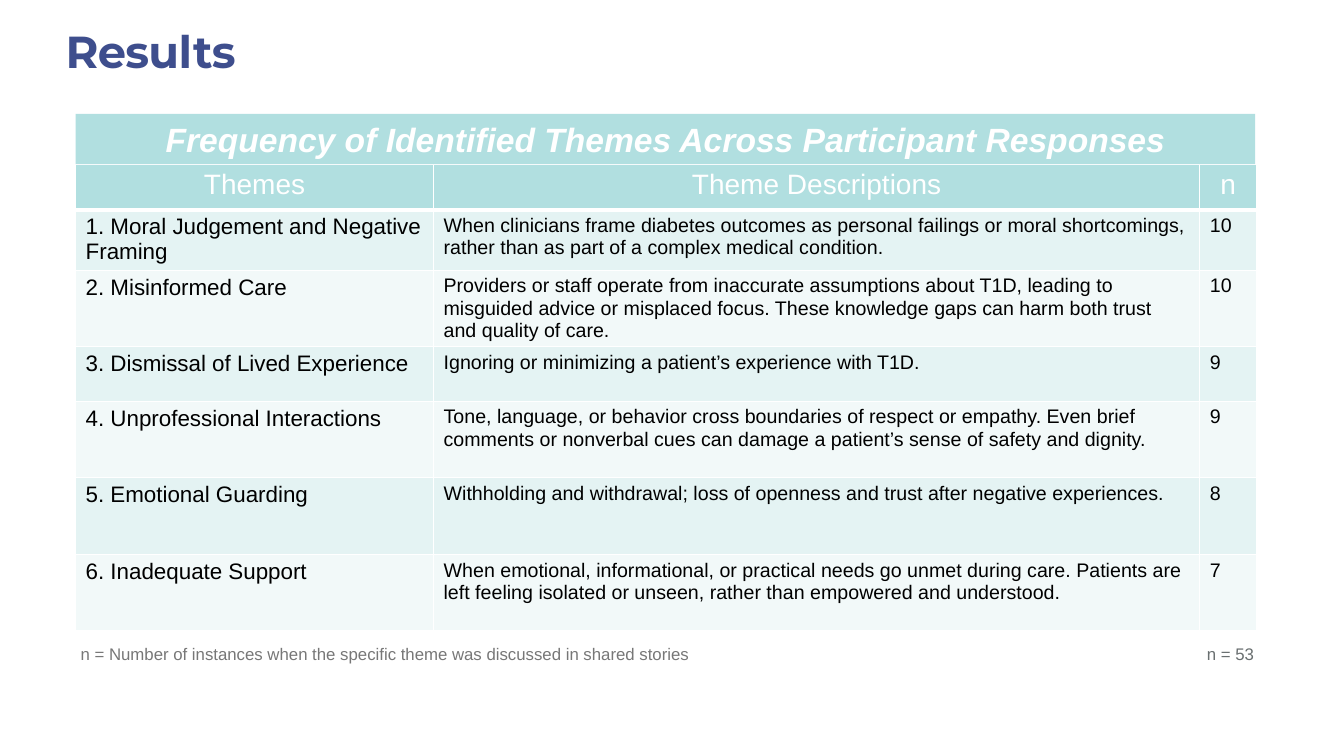
from lxml import etree
from pptx import Presentation
from pptx import util as u
from pptx.dml.color import RGBColor
from pptx.enum import shapes, text
from pptx.oxml.ns import qn

TITLE = "Results"
BANNER = "Frequency of Identified Themes Across Participant Responses"
HEADINGS = ("Themes", "Theme Descriptions", "n")
THEMES = [
    ("1. Moral Judgement and Negative Framing",
     "When clinicians frame diabetes outcomes as personal failings or moral shortcomings, "
     "rather than as part of a complex medical condition.", "10"),
    ("2. Misinformed Care",
     "Providers or staff operate from inaccurate assumptions about T1D, leading to misguided "
     "advice or misplaced focus. These knowledge gaps can harm both trust and quality of care.", "10"),
    ("3. Dismissal of Lived Experience",
     "Ignoring or minimizing a patient’s experience with T1D.", "9"),
    ("4. Unprofessional Interactions",
     "Tone, language, or behavior cross boundaries of respect or empathy. Even brief comments "
     "or nonverbal cues can damage a patient’s sense of safety and dignity.", "9"),
    ("5. Emotional Guarding",
     "Withholding and withdrawal; loss of openness and trust after negative experiences.", "8"),
    ("6. Inadequate Support",
     "When emotional, informational, or practical needs go unmet during care. Patients are left "
     "feeling isolated or unseen, rather than empowered and understood.", "7"),
]
NOTES = [
    ("n = Number of instances when the specific theme was discussed in shared stories",
     75, 646, "777777"),
    ("n = 53", 1192, 120, "696F70"),
]
COLUMNS = (355, 760, 56)
ROWS = (45, 60, 76, 54, 76, 76, 76)
SIZES = (16, 14, 14)
TEAL, WHITE, BLACK = "B1DFE0", "FFFFFF", "000000"
BANDS = ("E4F3F3", "F2F9F9")
LEFT, BANNER_TOP, BANNER_HEIGHT, WIDTH = 75, 113, 50, 1170
NOTE_TOP, NOTE_HEIGHT = 634, 30


def px(value):
    return u.Emu(value * 9144)


def paint(target, color):
    target.solid()
    target.fore_color.rgb = RGBColor.from_string(color)


def write(frame, words, size, color, align=text.PP_ALIGN.LEFT, name="Arial",
          bold=False, italic=False):
    para = frame.paragraphs[0]
    para.alignment = align
    span = para.add_run()
    span.text = words
    font = span.font
    font.name, font.size, font.bold, font.italic = name, u.Pt(size), bold, italic
    font.color.rgb = RGBColor.from_string(color)
    return span


def inset(frame):
    frame.word_wrap = True
    frame.margin_left = frame.margin_right = px(5)
    frame.margin_top = frame.margin_bottom = px(5)


def border(cell, bottom):
    properties = cell._tc.get_or_add_tcPr()
    for side, points in (("L", 1), ("R", 1), ("T", 1), ("B", bottom)):
        line = etree.SubElement(properties, qn("a:ln" + side), w=str(u.Pt(points)))
        solid = etree.SubElement(line, qn("a:solidFill"))
        etree.SubElement(solid, qn("a:srgbClr"), val=WHITE)


def add_title(page):
    box = page.shapes.title
    box.left, box.top, box.width, box.height = (px(v) for v in (60, 25, 1200, 50))
    frame = box.text_frame
    inset(frame)
    frame.auto_size = text.MSO_AUTO_SIZE.NONE
    frame.vertical_anchor = text.MSO_ANCHOR.MIDDLE
    span = write(frame, TITLE, 32, "3E4E8D", name="Montserrat", bold=True)
    span._r.get_or_add_rPr().set("spc", "-50")


def add_themes(page):
    top = BANNER_TOP + BANNER_HEIGHT
    table = page.shapes.add_table(len(ROWS), len(COLUMNS), px(LEFT), px(top),
                                  px(sum(COLUMNS)), px(sum(ROWS))).table
    table.horz_banding = table.first_row = False
    for column, width in zip(table.columns, COLUMNS):
        column.width = px(width)
    for row, height in zip(table.rows, ROWS):
        row.height = px(height)
    for r, words in enumerate([HEADINGS] + THEMES):
        for c, value in enumerate(words):
            cell = table.cell(r, c)
            border(cell, 1 if r else 3)
            if r:
                paint(cell.fill, BANDS[(r - 1) % 2])
                write(cell.text_frame, value, SIZES[c], BLACK)
            else:
                paint(cell.fill, TEAL)
                write(cell.text_frame, value, 20, WHITE, text.PP_ALIGN.CENTER)


def add_notes(page):
    for words, left, width, color in NOTES:
        box = page.shapes.add_textbox(px(left), px(NOTE_TOP), px(width), px(NOTE_HEIGHT))
        inset(box.text_frame)
        write(box.text_frame, words, 12, color)


def add_banner(page):
    box = page.shapes.add_shape(shapes.MSO_SHAPE.RECTANGLE, px(LEFT), px(BANNER_TOP),
                                px(WIDTH), px(BANNER_HEIGHT))
    box.shadow.inherit = False
    paint(box.fill, TEAL)
    box.line.fill.background()
    inset(box.text_frame)
    box.text_frame.vertical_anchor = text.MSO_ANCHOR.MIDDLE
    write(box.text_frame, BANNER, 24, WHITE, text.PP_ALIGN.CENTER, bold=True, italic=True)


def main():
    deck = Presentation()
    deck.slide_width, deck.slide_height = px(1333), px(750)
    page = deck.slides.add_slide(deck.slide_layouts[5])
    add_title(page)
    add_themes(page)
    add_notes(page)
    add_banner(page)
    deck.save("out.pptx")


if __name__ == "__main__":
    main()
